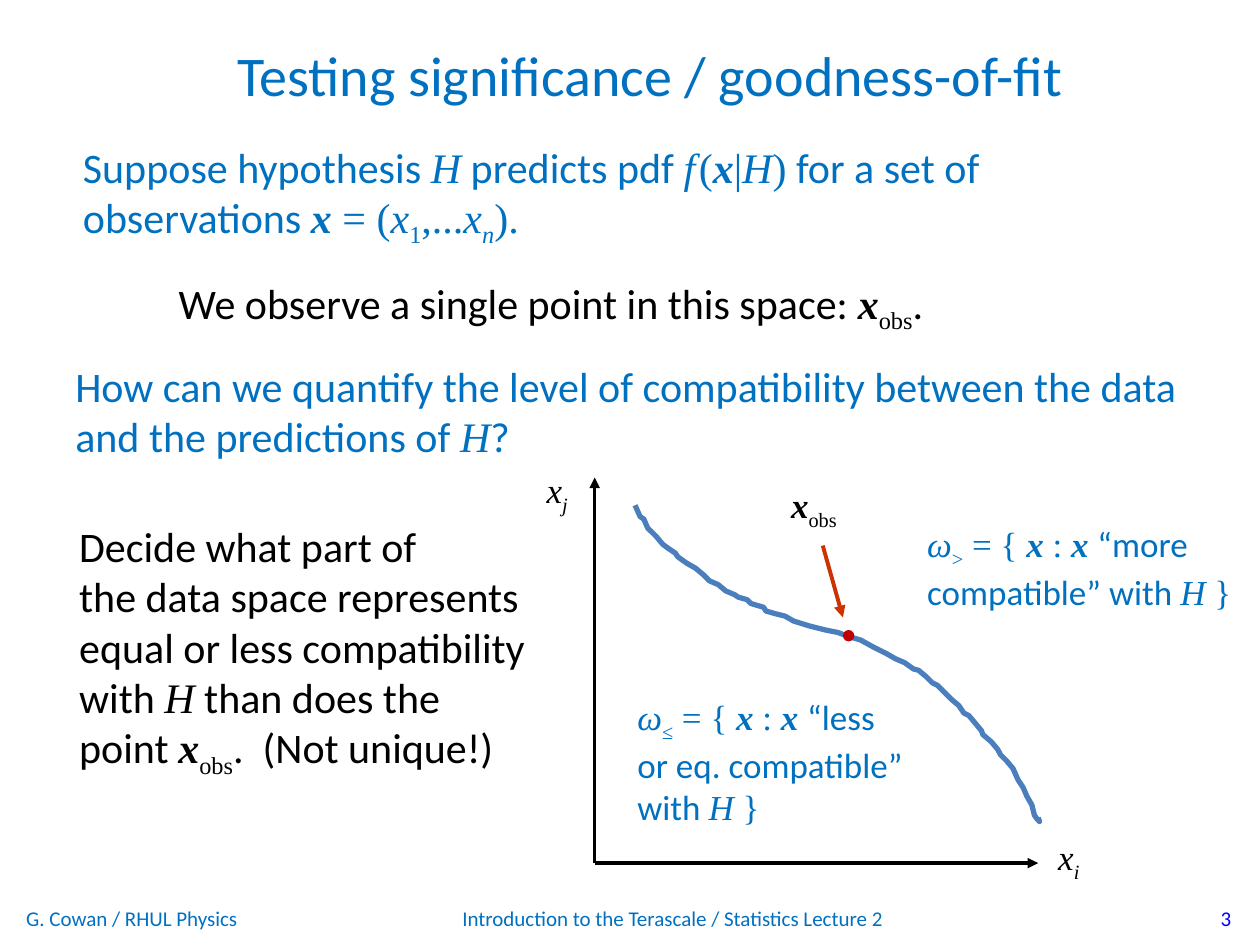
from dataclasses import dataclass

from lxml import etree
from pptx import Presentation
from pptx.dml.color import RGBColor
from pptx.enum.shapes import MSO_CONNECTOR as Connector, MSO_SHAPE as Shape
from pptx.enum.text import MSO_ANCHOR as Anchor, PP_ALIGN as Align
from pptx.oxml.ns import qn
from pptx.util import Inches, Pt


@dataclass(frozen=True)
class Theme:
    sans: str = "Calibri"
    serif: str = "Times New Roman"
    blue: str = "0070C0"
    black: str = "000000"
    number: str = "0000FF"
    curve: str = "4B7EBC"
    pointer: str = "CC3300"
    point: str = "C00000"
    title: int = 32
    body: int = 24
    label: int = 20
    footer: int = 12
    thin: int = 8


THEME = Theme()


# Spans of mathematical text: (wording, marks), where the marks are
# m = upright, i = italic, b = bold, _ = subscript, t = thin space.
def math(wording, marks="m"):
    return wording, marks


H = math("H", "i")
X = math("x", "bi")
OBS = math("obs", "m_")


def region(sign, first_words):
    """Opening line of the definition of a region of data space."""
    return [math("ω", "i"), math(sign, "m_"), math(" = { "), X, math(" : "),
            math("x ", "bi"), first_words]


class SlideBuilder:
    def __init__(self, page, theme):
        self.page = page
        self.theme = theme

    def text(self, left, top, width, height, paras, size, color,
             align=Align.LEFT, anchor=Anchor.TOP, wrap=True):
        """Add a text box; each para is a list of plain strings and math spans."""
        box = self.page.shapes.add_textbox(
            Inches(left), Inches(top), Inches(width), Inches(height))
        frame = box.text_frame
        frame.word_wrap = wrap
        frame.vertical_anchor = anchor
        for index, spans in enumerate(paras):
            para = frame.paragraphs[0] if index == 0 else frame.add_paragraph()
            para.alignment = align
            para.font.name = self.theme.sans
            para.font.size = Pt(size)
            para.font.color.rgb = RGBColor.from_string(color)
            for span in spans:
                self.span(para, span)

    def span(self, para, span):
        wording, marks = (span, "") if isinstance(span, str) else span
        run = para.add_run()
        run.text = wording
        if marks:
            run.font.name = self.theme.serif
        if "i" in marks:
            run.font.italic = True
        if "b" in marks:
            run.font.bold = True
        if "t" in marks:
            run.font.size = Pt(self.theme.thin)
        if "_" in marks:
            run.font._element.set("baseline", "-25000")

    def arrow(self, start, end, color, weight):
        line = self.page.shapes.add_connector(
            Connector.STRAIGHT, *(Inches(value) for value in (*start, *end)))
        line.line.color.rgb = RGBColor.from_string(color)
        line.line.width = Pt(weight)
        etree.SubElement(line.line._get_or_add_ln(), qn("a:tailEnd"), type="triangle")
        etree.SubElement(line._element.spPr, qn("a:effectLst"))

    def dot(self, left, top, size, color):
        dot = self.page.shapes.add_shape(
            Shape.OVAL, Inches(left), Inches(top), Inches(size), Inches(size))
        dot.shadow.inherit = False
        dot.fill.solid()
        dot.fill.fore_color.rgb = RGBColor.from_string(color)
        dot.line.fill.background()

    def curve(self, points, color, weight):
        start, *rest = [(Inches(x), Inches(y)) for x, y in points]
        builder = self.page.shapes.build_freeform(*start)
        builder.add_line_segments(rest, close=False)
        curve = builder.convert_to_shape()
        curve.shadow.inherit = False
        curve.fill.background()
        curve.line.color.rgb = RGBColor.from_string(color)
        curve.line.width = Pt(weight)


BOUNDARY = [
    (5.04, 4.01), (5.08, 4.10), (5.11, 4.12), (5.14, 4.19), (5.21, 4.26),
    (5.26, 4.32), (5.30, 4.35), (5.36, 4.39), (5.38, 4.42), (5.45, 4.47),
    (5.52, 4.51), (5.58, 4.56), (5.63, 4.61), (5.70, 4.64), (5.76, 4.69),
    (5.83, 4.72), (5.86, 4.74), (5.93, 4.76), (5.96, 4.79), (6.06, 4.82),
    (6.08, 4.85), (6.15, 4.87), (6.23, 4.89), (6.30, 4.93), (6.43, 4.97),
    (6.55, 5.00), (6.65, 5.02), (6.73, 5.05), (6.83, 5.08), (6.94, 5.14),
    (7.04, 5.19), (7.11, 5.23), (7.18, 5.26), (7.25, 5.31), (7.29, 5.32),
    (7.35, 5.37), (7.40, 5.42), (7.44, 5.44), (7.55, 5.55), (7.61, 5.60),
    (7.65, 5.66), (7.69, 5.68), (7.74, 5.74), (7.79, 5.80), (7.80, 5.83),
    (7.87, 5.89), (7.92, 5.95), (7.94, 5.99), (7.99, 6.04), (8.04, 6.10),
    (8.08, 6.19), (8.12, 6.25), (8.15, 6.32), (8.19, 6.39), (8.21, 6.47),
    (8.23, 6.50), (8.25, 6.52), (8.24, 6.49),
]


def add_footer(slide, theme):
    for left, width, wording, color, align in (
        (0.11, 2.33, "G. Cowan / RHUL Physics", theme.blue, Align.LEFT),
        (2.26, 6.16, "Introduction to the Terascale / Statistics Lecture 2",
         theme.blue, Align.CENTER),
        (7.54, 2.33, "3", theme.number, Align.RIGHT),
    ):
        slide.text(left, 7.09, width, 0.4, [[wording]], theme.footer, color,
                   align, Anchor.MIDDLE)


def add_body(slide, theme):
    slide.text(1.38, 0.27, 7.56, 0.47, [["Testing significance / goodness-of-fit"]],
               theme.title, theme.blue, Align.CENTER)
    slide.text(0.56, 1.07, 7.45, 0.91, [
        ["Suppose hypothesis ", H, " predicts pdf ", math("f", "i"), math(" ", "mt"),
         math("("), X, math("|"), H, math(")"), " for a set of"],
        ["observations ", X, math(" = ("), math("x", "i"), math("1", "m_"),
         math(",..."), math("x", "i"), math("n", "i_"), math(").")],
    ], theme.body, theme.blue, wrap=False)
    slide.text(1.32, 2.15, 6.28, 0.5, [
        ["We observe a single point in this space: ", X, OBS, "."],
    ], theme.body, theme.black, wrap=False)
    slide.text(0.5, 2.81, 9.27, 0.91, [
        ["How can we quantify the level of compatibility between the data "
         "and the predictions of ", H, "?"],
    ], theme.body, theme.blue)
    slide.text(0.53, 4.08, 3.82, 2.12, [
        ["Decide what part of"],
        ["the data space represents equal or less compatibility  with ", H,
         " than does the point ", X, OBS, ".  (Not unique!)"],
    ], theme.body, theme.black)


def add_diagram(slide, theme):
    slide.curve(BOUNDARY, theme.curve, 3)
    slide.text(4.96, 5.47, 2.88, 1.11, [
        region("≤", "“less"), ["or eq. compatible”"], ["with ", H, math(" }")],
    ], theme.label, theme.blue)
    slide.text(7.26, 4.1, 2.71, 0.77, [
        region(">", "“more"), ["compatible” with ", H, math(" }")],
    ], theme.label, theme.blue)

    origin = (4.72, 6.85)
    for tip in ((8.24, 6.85), (4.72, 3.79)):
        slide.arrow(origin, tip, theme.black, 2)
    slide.arrow((6.53, 4.33), (6.69, 4.9), theme.pointer, 2.25)
    slide.dot(6.69, 5, 0.09, theme.point)

    for left, top, width, spans in (
        (6.18, 3.79, 0.6, [X, OBS]),
        (8.3, 6.58, 0.38, [math("x", "i"), math("i", "i_")]),
        (4.24, 3.67, 0.38, [math("x", "i"), math("j", "i_")]),
    ):
        slide.text(left, top, width, 0.44, [spans], theme.label, theme.black, wrap=False)


def main():
    deck = Presentation()
    deck.slide_width, deck.slide_height = Inches(10), Inches(7.5)
    slide = SlideBuilder(deck.slides.add_slide(deck.slide_layouts[6]), THEME)
    add_footer(slide, THEME)
    add_body(slide, THEME)
    add_diagram(slide, THEME)
    deck.save("out.pptx")


if __name__ == "__main__":
    main()
